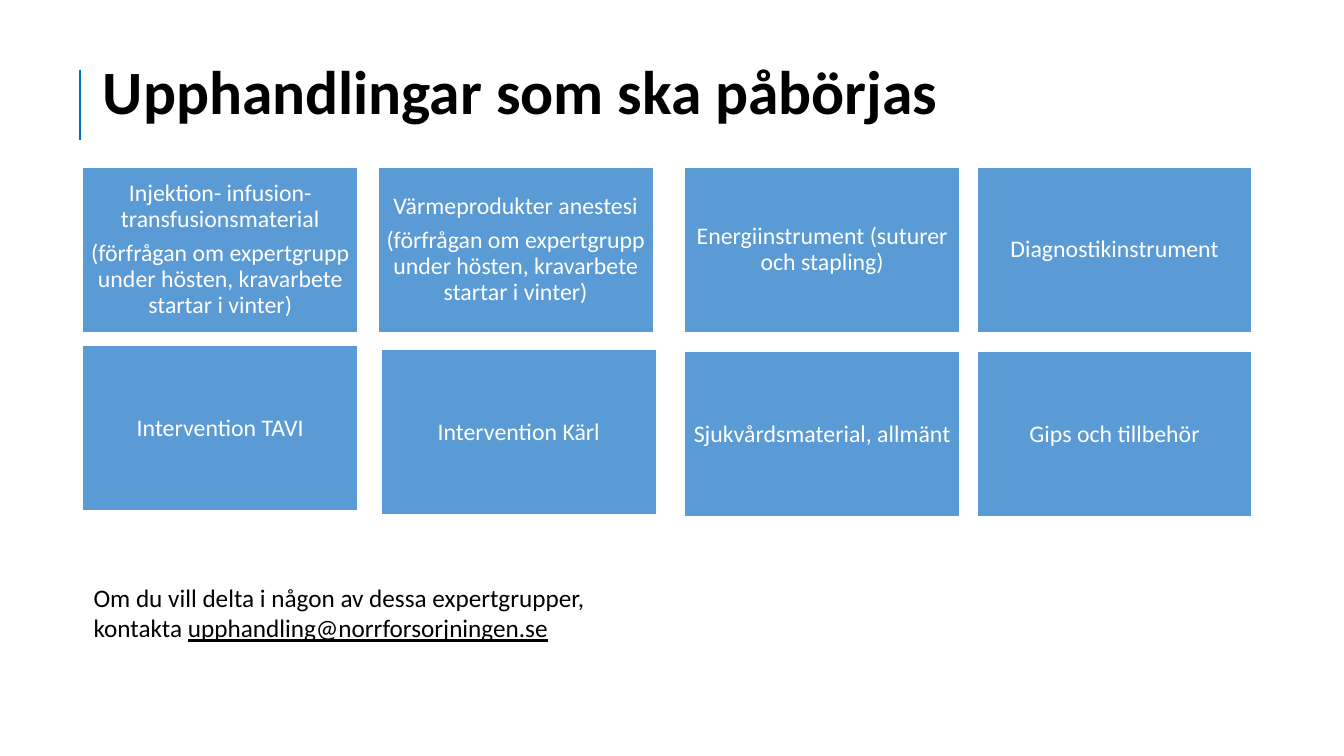
import pptx
import pptx.util
import pptx.dml.color
import pptx.enum.shapes
import pptx.enum.text
import lxml.etree

Inches = pptx.util.Inches
Pt = pptx.util.Pt
COLOURS = {"accent": "0070C0", "card": "5B9BD5", "white": "FFFFFF", "black": "000000"}
FONT = "Calibri"
CARD_WIDTH, CARD_HEIGHT = 2.73, 1.64
TOP_ROW = 1.66
REQUEST = "(förfrågan om expertgrupp under hösten, kravarbete startar i vinter)"


def colour(name):
    return pptx.dml.color.RGBColor.from_string(COLOURS[name])


def add_span(para, text, size, colour_name):
    span = para.add_run()
    span.text = text
    span.font.name = FONT
    span.font.size = Pt(size)
    span.font.color.rgb = colour(colour_name)
    return span


deck = pptx.Presentation()
deck.slide_width = Inches(13.33)
deck.slide_height = Inches(7.5)
page = deck.slides.add_slide(deck.slide_layouts[5])

rule = page.shapes.add_connector(
    pptx.enum.shapes.MSO_CONNECTOR.STRAIGHT,
    Inches(0.79), Inches(0.69), Inches(0.79), Inches(1.39))
rule.line.color.rgb = colour("accent")
rule.line.width = Pt(1.5)
lxml.etree.SubElement(rule._element.spPr, pptx.oxml.ns.qn("a:effectLst"))

title = page.shapes.title
title.left, title.top = Inches(0.92), Inches(0.21)
title.width, title.height = Inches(11.5), Inches(1.45)
title.text_frame.word_wrap = True
title.text_frame.vertical_anchor = pptx.enum.text.MSO_ANCHOR.MIDDLE
para = title.text_frame.paragraphs[0]
para.alignment = pptx.enum.text.PP_ALIGN.LEFT
para.line_spacing = 0.9
add_span(para, "Upphandlingar som ska påbörjas", 44, "black").font.bold = True

cards = [
    (0.82, TOP_ROW, ["Injektion- infusion- transfusionsmaterial", REQUEST]),
    (3.75, TOP_ROW, ["Värmeprodukter anestesi", REQUEST]),
    (6.79, TOP_ROW, ["Energiinstrument (suturer och stapling)"]),
    (9.69, TOP_ROW, ["Diagnostikinstrument"]),
    (0.82, 3.43, ["Intervention TAVI"]),
    (3.78, 3.47, ["Intervention Kärl"]),
    (6.79, 3.49, ["Sjukvårdsmaterial, allmänt"]),
    (9.69, 3.49, ["Gips och tillbehör"]),
]
for left, top, lines in cards:
    card = page.shapes.add_shape(
        pptx.enum.shapes.MSO_SHAPE.RECTANGLE,
        Inches(left), Inches(top), Inches(CARD_WIDTH), Inches(CARD_HEIGHT))
    card.shadow.inherit = False
    card.fill.solid()
    card.fill.fore_color.rgb = colour("card")
    card.line.color.rgb = colour("white")
    card.line.width = Pt(1)
    frame = card.text_frame
    frame.word_wrap = True
    frame.vertical_anchor = pptx.enum.text.MSO_ANCHOR.MIDDLE
    frame.margin_left = frame.margin_right = Inches(0.07)
    frame.margin_top = frame.margin_bottom = Inches(0.07)
    for index, line in enumerate(lines):
        para = frame.add_paragraph() if index else frame.paragraphs[0]
        para.alignment = pptx.enum.text.PP_ALIGN.CENTER
        para.line_spacing = 0.9
        para.space_after = Pt(6)
        add_span(para, line, 17, "white")

contact = page.shapes.add_textbox(Inches(0.83), Inches(5.73), Inches(5.13), Inches(1.01))
contact.text_frame.word_wrap = True
para = contact.text_frame.paragraphs[0]
add_span(para, "Om du vill delta i någon av dessa expertgrupper,", 18, "black")
para.add_line_break()
add_span(para, "kontakta ", 18, "black")
add_span(para, "upphandling@norrforsorjningen.se", 18, "black").font.underline = True

deck.save("out.pptx")
